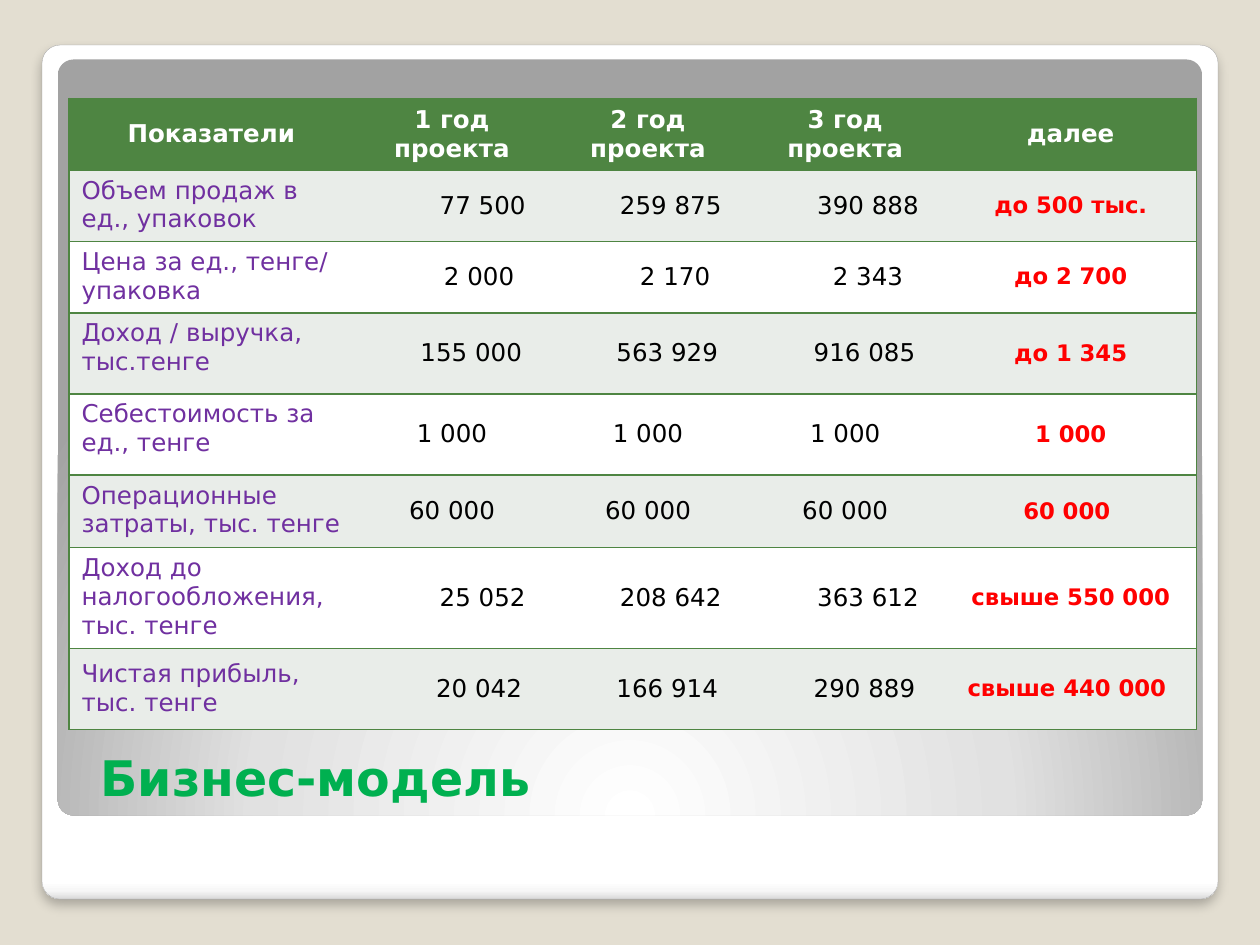
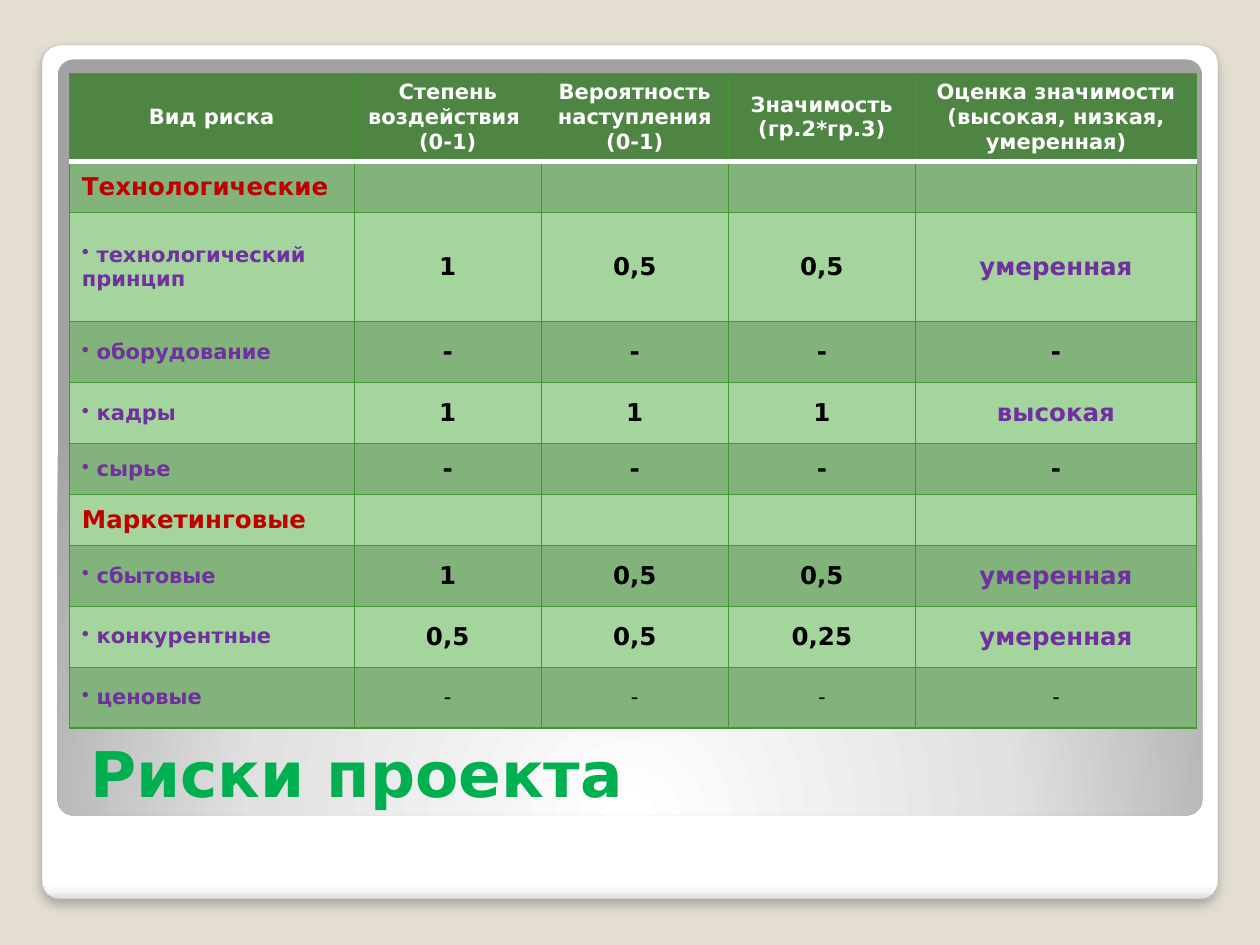
"""Build two project slides: a business model table and a risk table."""
from dataclasses import dataclass

from lxml import etree
from pptx import Presentation
from pptx.dml.color import RGBColor
from pptx.enum.shapes import MSO_SHAPE
from pptx.enum.text import MSO_ANCHOR, PP_ALIGN
from pptx.oxml.ns import qn
from pptx.util import Pt

ROUND = MSO_SHAPE.ROUNDED_RECTANGLE
LEFT, CENTER = PP_ALIGN.LEFT, PP_ALIGN.CENTER
TOP, MIDDLE, BOTTOM = MSO_ANCHOR.TOP, MSO_ANCHOR.MIDDLE, MSO_ANCHOR.BOTTOM


@dataclass(frozen=True)
class Theme:
    """Hold the colours and type sizes of the deck."""
    font: str = "DejaVu Sans"
    back: str = "E3DED1"
    rim: str = "A4A4A4"
    title: str = "00B050"
    head: str = "4E8542"
    grid: str = "439631"
    pale: str = "E9EDE9"
    light: str = "A3D59D"
    dark: str = "81B37A"
    white: str = "FFFFFF"
    black: str = "000000"
    label: str = "7030A0"
    group: str = "C00000"
    goal: str = "FF0000"
    body: float = 14
    mid: float = 13
    small: float = 12
    inset: float = 7.2


THEME = Theme()
CARD = [(0, "FFFFFF"), (98, "FFFFFF"), (99, "F7F7F7"), (100, "DADADA")]
GLOW = [(0, "FFFFFF"), (55, "E1E1E1"), (100, "A2A2A2")]

MODEL_HEAD = ["Показатели", "1 год проекта", "2 год проекта", "3 год проекта", "далее"]
MODEL = [
    ("Объем продаж в ед., упаковок", ["77 500", "259 875", "390 888"], [35, 26, 26], "до 500 тыс."),
    ("Цена за ед., тенге/ упаковка", ["2 000", "2 170", "2 343"], [31, 31, 26], "до 2 700"),
    ("Доход / выручка, тыс.тенге", ["155 000", "563 929", "916 085"], [22, 22, 22], "до 1 345"),
    ("Себестоимость за ед., тенге", ["1 000"] * 3, [0, 0, 0], "1 000"),
    ("Операционные затраты, тыс. тенге", ["60 000"] * 3, [0, 0, 0], "60 000 "),
    ("Доход до налогообложения, тыс. тенге", ["25 052", "208 642", "363 612"], [35, 26, 26],
     "свыше 550 000"),
    ("Чистая прибыль, тыс. тенге", ["20 042", "166 914", "290 889"], [31, 22, 22], "свыше 440 000 "),
]
RISK_HEAD = ["Вид риска", "Степень воздействия \n(0-1)", "Вероятность наступления (0-1)",
             "Значимость (гр.2*гр.3)", "Оценка значимости (высокая, низкая, умеренная)"]
NONE = ["-"] * 4
RISKS = [
    ("Технологические", []),
    ("технологический принцип", ["1", "0,5", "0,5", "умеренная"]),
    ("оборудование", NONE),
    ("кадры", ["1", "1", "1", "высокая"]),
    ("сырье", NONE),
    ("Маркетинговые", []),
    ("сбытовые", ["1", "0,5", "0,5", "умеренная"]),
    ("конкурентные", ["0,5", "0,5", "0,25", "умеренная"]),
    ("ценовые", NONE),
]


def rgb(code):
    """Turn a hex code into a colour."""
    return RGBColor.from_string(code)


def sub(node, tag, **attrs):
    """Add a drawing element with attributes."""
    return etree.SubElement(node, qn("a:" + tag), {k: str(v) for k, v in attrs.items()})


def tint(node, code, alpha=None):
    """Add a colour element, with opacity in percent if given."""
    color = sub(node, "srgbClr", val=code)
    if alpha is not None:
        sub(color, "alpha", val=alpha * 1000)


def write(frame, text, size, color, bold=True, align=LEFT, bullet=False):
    """Write each line of the text as one paragraph."""
    for i, line in enumerate(text.split("\n")):
        para = frame.add_paragraph() if i else frame.paragraphs[0]
        para.alignment = align
        if bullet:
            props = para._p.get_or_add_pPr()
            props.set("marL", "0")
            props.set("indent", "0")
            sub(props, "buChar", char="•")
        run = para.add_run()
        run.text = " " + line if bullet else line
        run.font.name = THEME.font
        run.font.size = Pt(size)
        run.font.bold = bold
        run.font.color.rgb = rgb(color)


def panel(slide, box, stops, radial=False):
    """Draw a rounded panel with a gradient fill and no shadow."""
    shape = slide.shapes.add_shape(ROUND, *map(Pt, box))
    shape.adjustments[0] = 0.021
    grad = etree.Element(qn("a:gradFill"), rotWithShape="1")
    steps = sub(grad, "gsLst")
    for pos, code in stops:
        tint(sub(steps, "gs", pos=pos * 1000), code)
    if radial:
        ring = sub(grad, "path", path="circle")
        sub(ring, "fillToRect", l=50000, t=175000, r=50000, b=-75000)
    else:
        sub(grad, "lin", ang=5400000, scaled=0)
    shape._element.spPr.insert(2, grad)
    shape.line.fill.background()
    shape.shadow.inherit = False
    return shape


def shade(shape):
    """Give the shape a soft shadow below it."""
    effect = shape._element.spPr.find(qn("a:effectLst"))
    drop = sub(effect, "outerShdw", blurRad=Pt(6), dist=Pt(4), dir=5400000, algn="t", rotWithShape=0)
    tint(drop, THEME.black, 25)


def stage(deck, title, size, box):
    """Add a slide with background, panels and title."""
    slide = deck.slides.add_slide(deck.slide_layouts[6])
    slide.background.fill.solid()
    slide.background.fill.fore_color.rgb = rgb(THEME.back)
    card = panel(slide, (24, 25.8, 672, 488), CARD)
    card.line.color.rgb = rgb(THEME.rim)
    card.line.width = Pt(0.16)
    shade(card)
    panel(slide, (33, 34, 654, 432), GLOW, radial=True)
    frame = slide.shapes.add_textbox(*map(Pt, box)).text_frame
    frame.word_wrap = True
    frame.vertical_anchor = BOTTOM
    write(frame, title, size, THEME.title)
    return slide


def grid(slide, left, top, widths, heights):
    """Add an empty table with the given column and row sizes."""
    box = (left, top, sum(widths), sum(heights))
    table = slide.shapes.add_table(len(heights), len(widths), *map(Pt, box)).table
    for col, width in zip(table.columns, widths):
        col.width = Pt(width)
    for row, height in zip(table.rows, heights):
        row.height = Pt(height)
    return table


def dress(cell, fill, edges):
    """Set cell borders, in order L R T B, and then the fill."""
    props = cell._tc.get_or_add_tcPr()
    for side, edge in zip("LRTB", edges):
        if edge:
            line = sub(props, "ln" + side, w=Pt(edge[1]))
            tint(sub(line, "solidFill"), edge[0])
        else:
            sub(sub(props, "ln" + side, w=0), "noFill")
    cell.fill.solid()
    cell.fill.fore_color.rgb = rgb(fill)
    cell.vertical_anchor = MIDDLE


def header(table, names, size):
    """Write the header row."""
    for cell, name in zip(table.rows[0].cells, names):
        write(cell.text_frame, name, size, THEME.white, align=CENTER)


def model(deck):
    """Build the business model slide."""
    slide = stage(deck, "Бизнес-модель", 28, (50.4, 416, 641.5, 48.4))
    table = grid(slide, 39.4, 56.2, [162.8, 112.2, 111.8, 113.6, 144],
                 [40, 40.4, 40, 46.3, 46.3, 41.5, 56.6, 46.3])
    rule = (THEME.head, 1)
    last = len(MODEL_HEAD) - 1
    for r, row in enumerate(table.rows):
        fill = THEME.pale if r % 2 else THEME.white
        for c, cell in enumerate(row.cells):
            edges = (rule if c == 0 else None, rule if c == last else None, rule, rule)
            dress(cell, fill if r else THEME.head, edges)
    header(table, MODEL_HEAD, THEME.body)
    for r, (label, years, pads, goal) in enumerate(MODEL, 1):
        name, *cells, end = table.rows[r].cells
        name.vertical_anchor = MIDDLE if r == len(MODEL) else TOP
        write(name.text_frame, label, THEME.body, THEME.label, False)
        for cell, year, pad in zip(cells, years, pads):
            cell.margin_left = Pt(THEME.inset + pad)
            write(cell.text_frame, year, THEME.body, THEME.black, False, CENTER)
        write(end.text_frame, goal, THEME.mid, THEME.goal, align=CENTER)


def risks(deck):
    """Build the project risk slide."""
    slide = stage(deck, "Риски проекта", 36, (44.6, 416, 644.4, 50.4))
    group, item = 29.1, 34.8
    table = grid(slide, 39.6, 41.8, [162.8, 106.9, 106.9, 106.9, 160.8],
                 [50.2, group, 62.6, item, item, group, group, item, item, item])
    thin, thick = (THEME.grid, 0.75), (THEME.white, 3.35)
    for r, row in enumerate(table.rows):
        fill = THEME.dark if r % 2 else THEME.light
        edges = (thin, thin, thick if r == 1 else thin, thin if r else thick)
        for cell in row.cells:
            dress(cell, fill if r else THEME.head, edges)
    header(table, RISK_HEAD, THEME.small)
    for r, (label, marks) in enumerate(RISKS, 1):
        name, *cells = table.rows[r].cells
        if not marks:
            write(name.text_frame, label, THEME.body, THEME.group)
            continue
        write(name.text_frame, label, THEME.small, THEME.label, bullet=True)
        final = r == len(RISKS)
        for cell, mark in zip(cells, marks):
            color = THEME.label if mark.isalpha() else THEME.black
            size = THEME.small if final else THEME.body
            write(cell.text_frame, mark, size, color, not final, CENTER)


def main():
    """Build and save the deck."""
    deck = Presentation()
    deck.slide_width, deck.slide_height = Pt(720), Pt(540)
    model(deck)
    risks(deck)
    deck.save("out.pptx")


if __name__ == "__main__":
    main()
